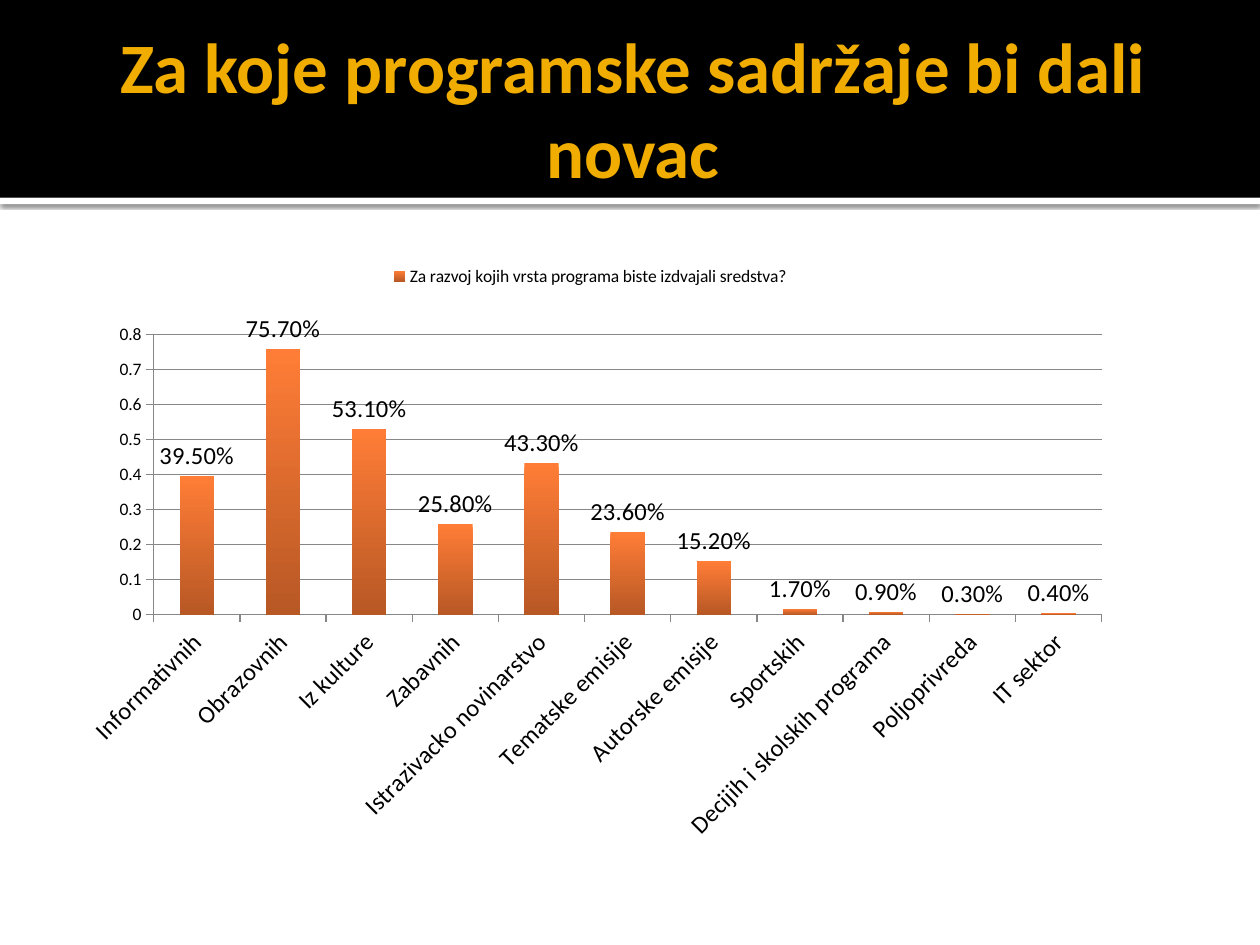
import pptx
import pptx.chart.data
import pptx.dml.color
import pptx.enum.chart
import pptx.enum.shapes
import pptx.enum.text
import pptx.oxml
import pptx.oxml.ns
import pptx.util

Inches = pptx.util.Inches
Pt = pptx.util.Pt
RGBColor = pptx.dml.color.RGBColor

BLACK = RGBColor(0x00, 0x00, 0x00)
WHITE = RGBColor(0xFF, 0xFF, 0xFF)
GOLD = RGBColor(0xF0, 0xAD, 0x00)
ORANGE_LIGHT = RGBColor(0xFF, 0x7D, 0x36)
ORANGE_DARK = RGBColor(0xB8, 0x58, 0x25)
GRAY = RGBColor(0x87, 0x87, 0x87)

QUESTION = "Za razvoj kojih vrsta programa biste izdvajali sredstva?"
SHARES = {
    "Informativnih": 0.395,
    "Obrazovnih": 0.757,
    "Iz kulture": 0.531,
    "Zabavnih": 0.258,
    "Istrazivacko novinarstvo": 0.433,
    "Tematske emisije": 0.236,
    "Autorske emisije": 0.152,
    "Sportskih": 0.017,
    "Decijih i skolskih programa": 0.009,
    "Poljoprivreda": 0.003,
    "IT sektor": 0.004,
}


class SlideBuilder:
    font_name = "Calibri"

    def __init__(self, slide):
        self.slide = slide

    def style(self, font, size, color=BLACK, bold=False):
        font.name = self.font_name
        font.size = Pt(size)
        font.bold = bold
        font.color.rgb = color

    def band(self, top, height, color, shadow=False):
        """Full-width bar placed behind the placeholders."""
        bar = self.slide.shapes.add_shape(
            pptx.enum.shapes.MSO_SHAPE.RECTANGLE,
            Inches(0), Inches(top), Inches(10), Inches(height))
        bar.fill.solid()
        bar.fill.fore_color.rgb = color
        bar.line.fill.background()
        bar.shadow.inherit = False
        if shadow:
            effects = bar._element.spPr.find(pptx.oxml.ns.qn("a:effectLst"))
            effects.append(pptx.oxml.parse_xml(
                f'<a:outerShdw {pptx.oxml.ns.nsdecls("a")} blurRad="{Pt(2.5)}"'
                f' dist="{Pt(0.8)}" dir="5400000" algn="tl" rotWithShape="0">'
                '<a:srgbClr val="000000"><a:alpha val="60000"/></a:srgbClr>'
                '</a:outerShdw>'))
        self.slide.shapes._spTree.remove(bar._element)
        self.slide.shapes.title._element.addprevious(bar._element)

    def title(self, text, left, top, width, height):
        heading = self.slide.shapes.title
        heading.left, heading.top = Inches(left), Inches(top)
        heading.width, heading.height = Inches(width), Inches(height)
        frame = heading.text_frame
        frame.word_wrap = True
        frame.auto_size = pptx.enum.text.MSO_AUTO_SIZE.NONE
        frame.vertical_anchor = pptx.enum.text.MSO_ANCHOR.MIDDLE
        frame.margin_left = Inches(0.1)
        frame.margin_right = frame.margin_top = frame.margin_bottom = Inches(0.05)
        paragraph = frame.paragraphs[0]
        paragraph.alignment = pptx.enum.text.PP_ALIGN.CENTER
        run = paragraph.add_run()
        run.text = text
        self.style(run.font, 40.5, GOLD, bold=True)

    def layout(self, x, y, w, h, inner=False):
        target = '<c:layoutTarget val="inner"/>' if inner else ""
        return pptx.oxml.parse_xml(
            f'<c:layout {pptx.oxml.ns.nsdecls("c")}><c:manualLayout>{target}'
            '<c:xMode val="edge"/><c:yMode val="edge"/>'
            f'<c:x val="{x}"/><c:y val="{y}"/><c:w val="{w}"/><c:h val="{h}"/>'
            '</c:manualLayout></c:layout>')

    def column_chart(self, name, shares, left, top, width, height):
        data = pptx.chart.data.CategoryChartData()
        data.categories = list(shares)
        data.add_series(name, list(shares.values()))
        chart = self.slide.shapes.add_chart(
            pptx.enum.chart.XL_CHART_TYPE.COLUMN_CLUSTERED,
            Inches(left), Inches(top), Inches(width), Inches(height), data).chart
        chart.has_title = False
        self.style(chart.font, 10)

        # Plot area
        plot_area = chart._chartSpace.chart.plotArea
        for old in plot_area.findall(pptx.oxml.ns.qn("c:layout")):
            plot_area.remove(old)
        plot_area.insert(0, self.layout(0.08, 0.141, 0.836, 0.44, inner=True))

        # Legend
        chart.has_legend = True
        legend = chart.legend
        legend.position = pptx.enum.chart.XL_LEGEND_POSITION.RIGHT
        legend.include_in_layout = False
        self.style(legend.font, 10)
        for old in legend._element.findall(pptx.oxml.ns.qn("c:layout")):
            legend._element.remove(old)
        legend._element.find(pptx.oxml.ns.qn("c:legendPos")).addnext(
            self.layout(0.28, 0.02, 0.37, 0.06))

        # Axes
        for axis, size in ((chart.category_axis, 14), (chart.value_axis, 10)):
            axis.major_tick_mark = pptx.enum.chart.XL_TICK_MARK.OUTSIDE
            axis.minor_tick_mark = pptx.enum.chart.XL_TICK_MARK.NONE
            axis.format.line.color.rgb = GRAY
            axis.format.line.width = Pt(0.75)
            self.style(axis.tick_labels.font, size)
        labels_body = chart.category_axis._element.find(
            pptx.oxml.ns.qn("c:txPr")).find(pptx.oxml.ns.qn("a:bodyPr"))
        labels_body.set("rot", "-2700000")
        labels_body.set("vert", "horz")
        values = chart.value_axis
        values.minimum_scale, values.maximum_scale = 0, 0.8
        values.major_unit = 0.1
        values.tick_labels.number_format = "General"
        values.tick_labels.number_format_is_linked = False
        values.has_major_gridlines = True
        values.major_gridlines.format.line.color.rgb = GRAY
        values.major_gridlines.format.line.width = Pt(0.75)

        # Columns and their labels
        plot = chart.plots[0]
        plot.vary_by_categories = False
        plot.gap_width = 150
        columns = plot.series[0]
        fill = columns.format.fill
        fill.gradient()
        fill.gradient_angle = 270
        for stop, color in zip(fill.gradient_stops, (ORANGE_LIGHT, ORANGE_DARK)):
            stop.color.rgb = color
        labels = columns.data_labels
        labels.show_value = True
        labels.number_format = "0.00%"
        labels.number_format_is_linked = False
        labels.position = pptx.enum.chart.XL_LABEL_POSITION.OUTSIDE_END
        self.style(labels.font, 14)


def main():
    deck = pptx.Presentation()
    deck.slide_width, deck.slide_height = Inches(10), Inches(7.5)
    builder = SlideBuilder(deck.slides.add_slide(deck.slide_layouts[5]))

    # Header
    builder.band(1.57, 0.05, WHITE, shadow=True)
    builder.band(0, 1.57, BLACK)
    builder.title("Za koje programske sadržaje bi dali novac", 0.5, 0.17, 9, 1.37)

    # Survey results
    builder.column_chart(QUESTION, SHARES, 0.5, 1.94, 9, 5.06)

    deck.save("out.pptx")


if __name__ == "__main__":
    main()
